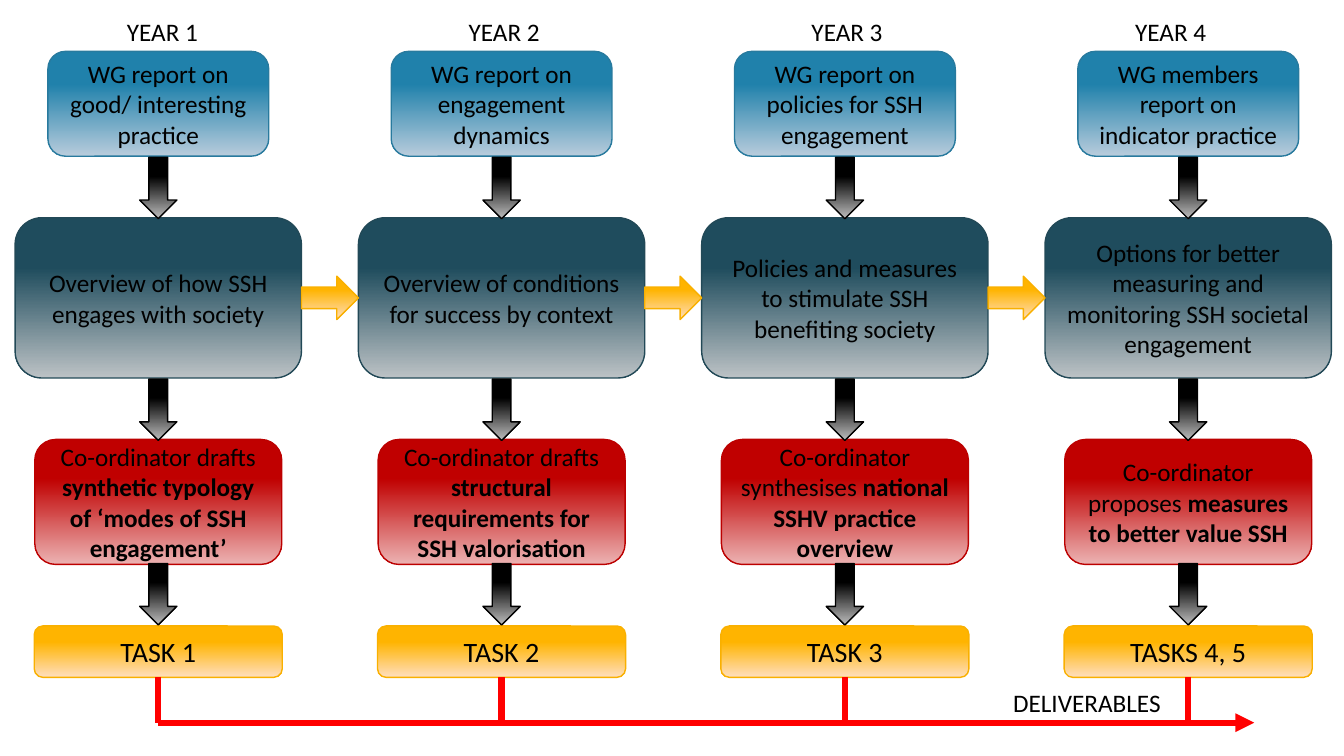
from dataclasses import dataclass

from lxml.etree import SubElement
from pptx import Presentation
from pptx.dml.color import RGBColor
from pptx.enum.shapes import MSO_CONNECTOR, MSO_SHAPE
from pptx.enum.text import MSO_ANCHOR, PP_ALIGN
from pptx.oxml.ns import qn
from pptx.util import Inches, Pt

BLACK = RGBColor(0x00, 0x00, 0x00)
GREY = RGBColor(0xBD, 0xBD, 0xBD)
RED = RGBColor(0xFF, 0x00, 0x00)


@dataclass(frozen=True)
class Style:
    """Vertical gradient from top to bottom, with an outline."""
    top: RGBColor
    bottom: RGBColor
    line: RGBColor


@dataclass(frozen=True)
class Row:
    """One box per year; a text is (plain, bold)."""
    top: float
    width: float
    height: float
    style: Style
    texts: list[tuple[str, str]]
    size: int = 18


BLUE = Style(RGBColor(0x20, 0x81, 0xAB), RGBColor(0xB8, 0xCC, 0xDC), RGBColor(0x28, 0x7A, 0x9E))
TEAL = Style(RGBColor(0x1F, 0x4C, 0x5D), RGBColor(0xBC, 0xC2, 0xC5), RGBColor(0x22, 0x49, 0x57))
CRIMSON = Style(RGBColor(0xC0, 0x00, 0x00), RGBColor(0xEC, 0xB3, 0xB3), RGBColor(0xBC, 0x00, 0x00))
AMBER = Style(RGBColor(0xFF, 0xB4, 0x00), RGBColor(0xFF, 0xDE, 0xBD), RGBColor(0xF9, 0xB0, 0x00))
DARK = Style(BLACK, GREY, BLACK)

# Grid: four year columns, four rows of boxes
COLUMNS = 4
FIRST_CENTRE, PITCH = 1.57, 3.405
CENTRES = [FIRST_CENTRE + PITCH * i for i in range(COLUMNS)]

OVERVIEWS = Row(2.16, 2.84, 1.59, TEAL, [
    ("Overview of how SSH engages with society", ""),
    ("Overview of conditions for success by context", ""),
    ("Policies and measures to stimulate SSH benefiting society", ""),
    ("Options for better measuring and monitoring SSH societal engagement", ""),
])
REPORTS = Row(0.51, 2.19, 1.04, BLUE, [
    ("WG report on good/ interesting practice", ""),
    ("WG report on engagement dynamics", ""),
    ("WG report on policies for SSH engagement", ""),
    ("WG members report on indicator practice", ""),
])
DRAFTS = Row(4.36, 2.45, 1.24, CRIMSON, [
    ("Co-ordinator drafts ", "synthetic typology of ‘modes of SSH engagement’"),
    ("Co-ordinator drafts ", "structural requirements for SSH valorisation"),
    ("Co-ordinator synthesises ", "national SSHV practice overview"),
    ("Co-ordinator proposes ", "measures to better value SSH"),
])
TASKS = Row(6.21, 2.46, 0.51, AMBER, [
    ("TASK 1", ""), ("TASK 2", ""), ("TASK 3", ""), ("TASKS 4, 5", ""),
], size=20)

DOWN_TOPS = [1.56, 3.76, 5.59]
DOWN_W, DOWN_H = 0.37, 0.61
ACROSS_TOP, ACROSS_H = 2.74, 0.43
TASK_BOTTOM = TASKS.top + TASKS.height
TIMELINE_Y, TIMELINE_END = 7.17, 12.44
YEAR_TABS = [3.39, 6.79, 10.0]


def add_run(p, text: str, *, size: int = 18, bold: bool = False) -> None:
    r = p.add_run()
    r.text = text
    r.font.name = "Calibri"
    r.font.size = Pt(size)
    r.font.bold = bold
    r.font.color.rgb = BLACK


def add_block(s, kind, x: float, y: float, w: float, h: float, style: Style):
    sp = s.shapes.add_shape(kind, Inches(x), Inches(y), Inches(w), Inches(h))
    sp.shadow.inherit = False
    sp.fill.gradient()
    sp.fill.gradient_angle = 270
    first, last = sp.fill.gradient_stops
    first.position, first.color.rgb = 0.31, style.top
    last.position, last.color.rgb = 1, style.bottom
    sp.line.color.rgb = style.line
    sp.line.width = Pt(1)
    return sp


def add_row(s, row: Row) -> None:
    for centre, (plain, bold) in zip(CENTRES, row.texts):
        sp = add_block(s, MSO_SHAPE.ROUNDED_RECTANGLE, centre - row.width / 2,
                       row.top, row.width, row.height, row.style)
        tf = sp.text_frame
        tf.word_wrap = True
        tf.vertical_anchor = MSO_ANCHOR.MIDDLE
        p = tf.paragraphs[0]
        p.alignment = PP_ALIGN.CENTER
        add_run(p, plain, size=row.size)
        if bold:
            add_run(p, bold, size=row.size, bold=True)


def add_label(s, text: str, x: float, y: float, w: float, tabs: tuple | list = ()) -> None:
    tf = s.shapes.add_textbox(Inches(x), Inches(y), Inches(w), Inches(0.4)).text_frame
    tf.word_wrap = True
    p = tf.paragraphs[0]
    add_run(p, text)
    if tabs:
        tab_list = SubElement(p._p.get_or_add_pPr(), qn("a:tabLst"))
        for tab in tabs:
            SubElement(tab_list, qn("a:tab"), pos=str(Inches(tab)), algn="l")


def add_line(s, x1: float, y1: float, x2: float, y2: float, arrow: bool = False) -> None:
    line = s.shapes.add_connector(MSO_CONNECTOR.STRAIGHT, Inches(x1), Inches(y1),
                                  Inches(x2), Inches(y2))
    line.line.color.rgb = RED
    line.line.width = Pt(4.5)
    if arrow:
        SubElement(line.line._get_or_add_ln(), qn("a:tailEnd"), type="triangle")
    SubElement(line._element.spPr, qn("a:effectLst"))


def main() -> None:
    prs = Presentation()
    prs.slide_width, prs.slide_height = Inches(13.33), Inches(7.5)
    s = prs.slides.add_slide(prs.slide_layouts[6])

    # Boxes
    for row in (OVERVIEWS, REPORTS, DRAFTS, TASKS):
        add_row(s, row)

    # Arrows from year to year
    for centre in CENTRES[:-1]:
        add_block(s, MSO_SHAPE.RIGHT_ARROW, centre + OVERVIEWS.width / 2, ACROSS_TOP,
                  PITCH - OVERVIEWS.width, ACROSS_H, AMBER)

    # Arrows from row to row
    for top in DOWN_TOPS:
        for centre in CENTRES:
            add_block(s, MSO_SHAPE.DOWN_ARROW, centre - DOWN_W / 2, top, DOWN_W, DOWN_H, DARK)

    # Year headings
    years = "\t".join(f"YEAR {i + 1}" for i in range(COLUMNS))
    add_label(s, years, 1.16, 0.11, 11.72, YEAR_TABS)

    # Deliverables timeline
    for centre in CENTRES:
        add_line(s, centre, TASK_BOTTOM, centre, TIMELINE_Y)
    add_line(s, FIRST_CENTRE, TIMELINE_Y, TIMELINE_END, TIMELINE_Y, arrow=True)
    add_label(s, "DELIVERABLES", 9.95, 6.77, 1.77)

    prs.save("out.pptx")


if __name__ == "__main__":
    main()
